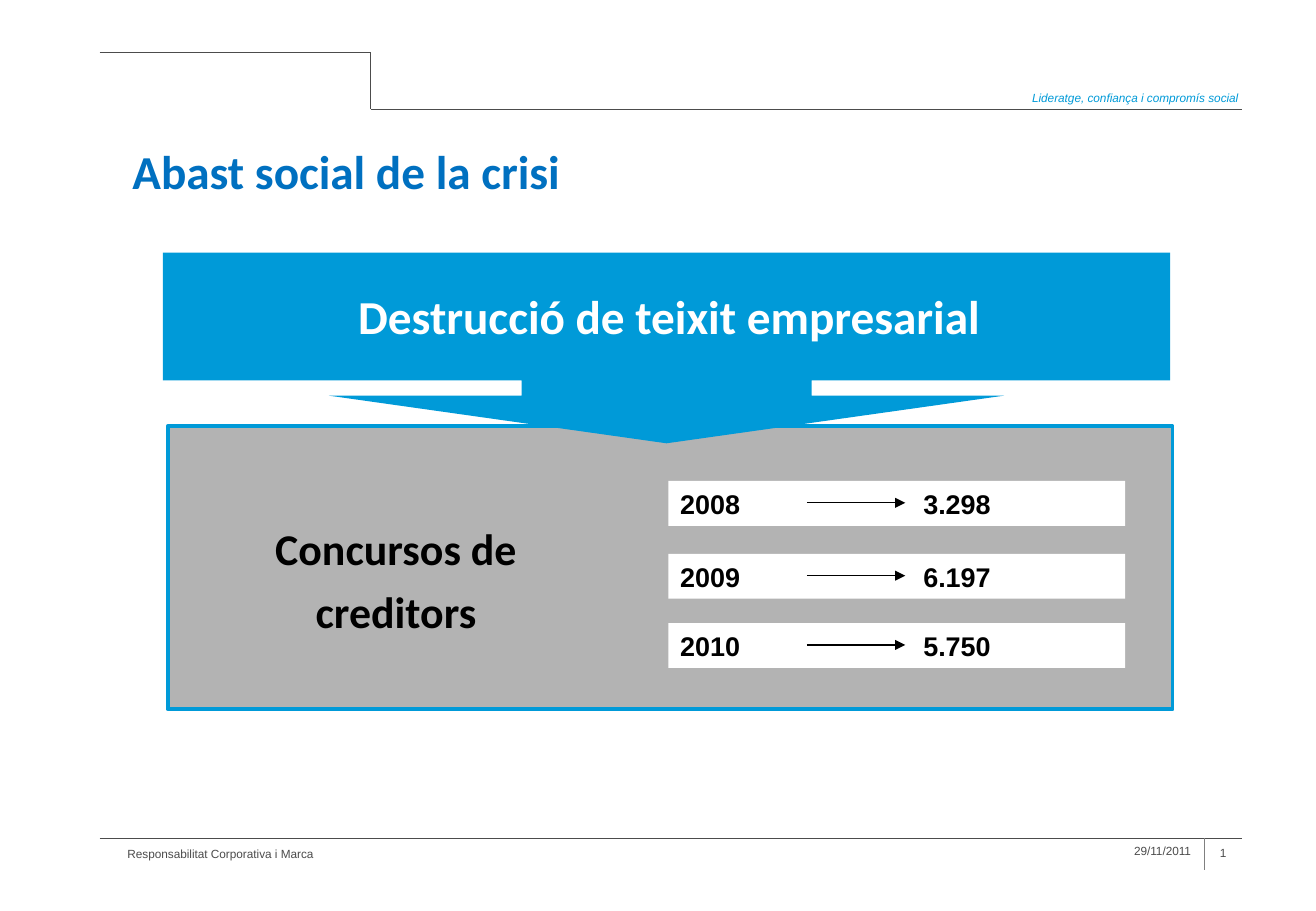
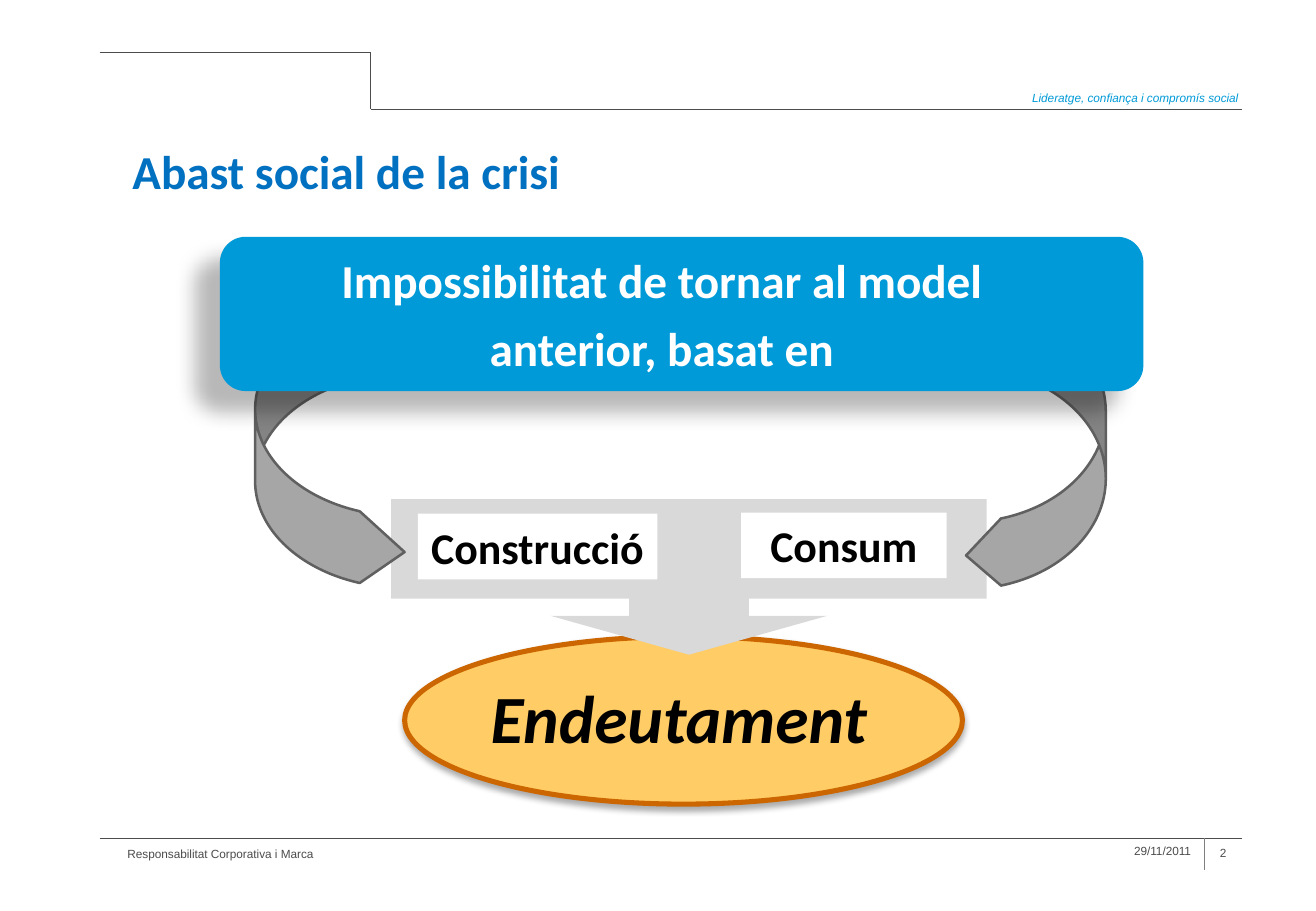
from dataclasses import dataclass
from lxml.etree import SubElement
from pptx import Presentation
from pptx.dml.color import RGBColor
from pptx.enum.shapes import MSO_CONNECTOR, MSO_SHAPE as Shape
from pptx.enum.text import MSO_ANCHOR as Anchor, MSO_AUTO_SIZE, PP_ALIGN as Align
from pptx.oxml.ns import qn
from pptx.util import Pt

PX = 9144  # EMU; 100 px to the inch
TITLE_ONLY = 5


@dataclass(frozen=True)
class Style:
    size: int
    font: str
    color: str
    bold: bool = False
    italic: bool = False


@dataclass(frozen=True)
class Theme:
    blue: str = "009AD8"
    panel: str = "B3B3B3"
    callout: str = "D9D9D9"
    curve: str = "A6A6A6"
    curve_edge: str = "606060"
    amber: str = "FFCC66"
    amber_edge: str = "CC6600"
    white: str = "FFFFFF"
    black: str = "000000"
    rule: str = "4C4C4C"
    divider: str = "808080"
    tagline: Style = Style(7, "Arial", "009AD8", italic=True)
    footer: Style = Style(7, "Arial", "4C4C4C")
    title: Style = Style(28, "Calibri", "0070C0", bold=True)
    banner: Style = Style(28, "Calibri", "FFFFFF", bold=True)
    label: Style = Style(26, "Calibri", "000000", bold=True)
    result: Style = Style(40, "Calibri", "000000", bold=True, italic=True)
    figure: Style = Style(16, "Arial", "000000", bold=True)


THEME = Theme()

TITLE = "Abast social de la crisi"
TAGLINE = "Lideratge, confiança i compromís social"
DEPARTMENT = "Responsabilitat Corporativa i Marca"
DATE = "29/11/2011"
FRAME_RULES = [
    ((82, 690), (1022, 690), THEME.rule),
    ((991, 690), (991, 716), THEME.divider),
    ((82, 43), (305, 43), THEME.rule),
    ((305, 43), (305, 90), THEME.rule),
    ((305, 90), (1022, 90), THEME.rule),
]

DESTRUCTION = "Destrucció de teixit empresarial"
INSOLVENCIES = "Concursos de creditors"
INSOLVENCY_ROWS = [("2008", "3.298", 396), ("2009", "6.197", 456), ("2010", "5.750", 513)]
ROW_LEFT, ROW_WIDTH, ROW_HEIGHT, FIGURE_TAB = 550, 376, 37, 200
ARROW_FROM, ARROW_TO = 664, 745

OLD_MODEL = "Impossibilitat de tornar al model anterior, basat en"
PILLARS = [("Construcció", (344, 423, 197, 54)), ("Consum", (610, 422, 169, 54))]
CURVED_ARROWS = [
    (Shape.CURVED_RIGHT_ARROW, (210, 249, 123, 235), (0.48, 0.48, 0.3)),
    (Shape.CURVED_LEFT_ARROW, (795, 248, 115, 237), (0.5, 0.48, 0.25)),
]
DEBT = "Endeutament"


def emu(lengths):
    return [length * PX for length in lengths]


def rgb(color):
    return RGBColor.from_string(color)


def set_font(font, style):
    font.size, font.name = Pt(style.size), style.font
    font.bold, font.italic = style.bold, style.italic
    font.color.rgb = rgb(style.color)


def write(frame, text, style, align=Align.LEFT, spacing=None, wrap=True):
    frame.word_wrap = wrap
    frame.auto_size = MSO_AUTO_SIZE.NONE
    paragraph = frame.paragraphs[0]
    paragraph.alignment = align
    if spacing:
        paragraph.line_spacing = spacing
    run = paragraph.add_run()
    run.text = text
    set_font(run.font, style)
    return paragraph


def add_text(slide, box, text, style, **options):
    return write(slide.shapes.add_textbox(*emu(box)).text_frame, text, style, **options)


def add_block(slide, kind, box, fill, edge=None, edge_width=0, adjustments=()):
    block = slide.shapes.add_shape(kind, *emu(box))
    block.shadow.inherit = False
    block.fill.solid()
    block.fill.fore_color.rgb = rgb(fill)
    if edge:
        block.line.color.rgb = rgb(edge)
        block.line.width = Pt(edge_width)
    else:
        block.line.fill.background()
    for index, value in enumerate(adjustments):
        block.adjustments[index] = value
    return block


def cast_shadow(block, opacity, blur, distance, angle):
    """Blur and distance are points, the angle is degrees, the opacity percent."""
    effects = block._element.spPr.find(qn("a:effectLst"))
    shadow = SubElement(effects, qn("a:outerShdw"), blurRad=str(Pt(blur)),
                        dist=str(Pt(distance)), dir=str(angle * 60000),
                        algn="ctr", rotWithShape="0")
    color = SubElement(shadow, qn("a:srgbClr"), val=THEME.black)
    SubElement(color, qn("a:alpha"), val=str(opacity * 1000))


def add_rule(slide, start, end, color, width=0.25, arrow=False):
    rule = slide.shapes.add_connector(MSO_CONNECTOR.STRAIGHT, *emu(start + end))
    rule.line.color.rgb = rgb(color)
    rule.line.width = Pt(width)
    properties = rule._element.spPr
    if arrow:
        SubElement(properties.find(qn("a:ln")), qn("a:tailEnd"), type="triangle")
    SubElement(properties, qn("a:effectLst"))


def add_page_number(slide, number):
    """Turn the written number into a slide number field."""
    paragraph = add_text(slide, (994, 691, 38, 21), str(number), THEME.footer, wrap=False)
    field = paragraph.runs[0]._r
    field.tag = qn("a:fld")
    field.set("id", "{B6F15528-21DE-4FAA-801E-634DDDAF4B2B}")
    field.set("type", "slidenum")


def start_slide(deck, number):
    slide = deck.slides.add_slide(deck.slide_layouts[TITLE_ONLY])
    title = slide.shapes.title
    title.left, title.top, title.width, title.height = emu((99, 112, 631, 43))
    title.text_frame.vertical_anchor = Anchor.TOP
    write(title.text_frame, TITLE, THEME.title)
    for start, end, color in FRAME_RULES:
        add_rule(slide, start, end, color)
    add_text(slide, (708, 70, 321, 22), TAGLINE, THEME.tagline, align=Align.RIGHT)
    add_text(slide, (95, 692, 232, 26), DEPARTMENT, THEME.footer)
    add_text(slide, (872, 690, 118, 24), DATE, THEME.footer, align=Align.RIGHT)
    add_page_number(slide, number)
    return slide


def add_insolvency_row(slide, year, total, top):
    row = add_block(slide, Shape.RECTANGLE, (ROW_LEFT, top, ROW_WIDTH, ROW_HEIGHT), THEME.white)
    paragraph = write(row.text_frame, f"{year}\t{total}", THEME.figure)
    tabs = SubElement(paragraph._p.get_or_add_pPr(), qn("a:tabLst"))
    SubElement(tabs, qn("a:tab"), pos=str(FIGURE_TAB * PX), algn="l")
    middle = top + ROW_HEIGHT // 2
    add_rule(slide, (ARROW_FROM, middle), (ARROW_TO, middle), THEME.black, 0.75, arrow=True)


def build_destruction(deck):
    slide = start_slide(deck, 2)
    add_block(slide, Shape.RECTANGLE, (138, 351, 827, 233), THEME.panel, THEME.blue, 2.25)
    add_block(slide, Shape.DOWN_ARROW_CALLOUT, (134, 208, 829, 157), THEME.blue,
              adjustments=(1.52, 1.77, 0.25, 0.67))
    add_text(slide, (285, 222, 566, 67), DESTRUCTION, THEME.banner, spacing=1.2)
    add_text(slide, (158, 416, 336, 115), INSOLVENCIES, THEME.label,
             align=Align.CENTER, spacing=1.2)
    for row in INSOLVENCY_ROWS:
        add_insolvency_row(slide, *row)


def build_old_model(deck):
    slide = start_slide(deck, 3)
    debt = add_block(slide, Shape.OVAL, (333, 524, 459, 138), THEME.amber, THEME.amber_edge, 3)
    cast_shadow(debt, 32, 3.5, 2.2, 90)
    add_block(slide, Shape.DOWN_ARROW_CALLOUT, (322, 411, 490, 128), THEME.callout,
              adjustments=(0.77, 0.89, 0.25, 0.64))
    for kind, box, adjustments in CURVED_ARROWS:
        add_block(slide, kind, box, THEME.curve, THEME.curve_edge, 1.5, adjustments)
    for name, box in PILLARS:
        pillar = add_block(slide, Shape.RECTANGLE, box, THEME.white)
        write(pillar.text_frame, name, THEME.label, align=Align.CENTER, wrap=False)
    add_text(slide, (394, 552, 333, 77), DEBT, THEME.result, wrap=False)
    banner = add_block(slide, Shape.ROUNDED_RECTANGLE, (181, 195, 760, 127), THEME.blue)
    cast_shadow(banner, 28, 11.8, 19.7, 141)
    add_text(slide, (205, 193, 679, 123), OLD_MODEL, THEME.banner,
             align=Align.CENTER, spacing=1.2)


def main():
    deck = Presentation()
    deck.slide_width, deck.slide_height = emu((1083, 750))
    build_destruction(deck)
    build_old_model(deck)
    deck.save("out.pptx")


if __name__ == "__main__":
    main()
